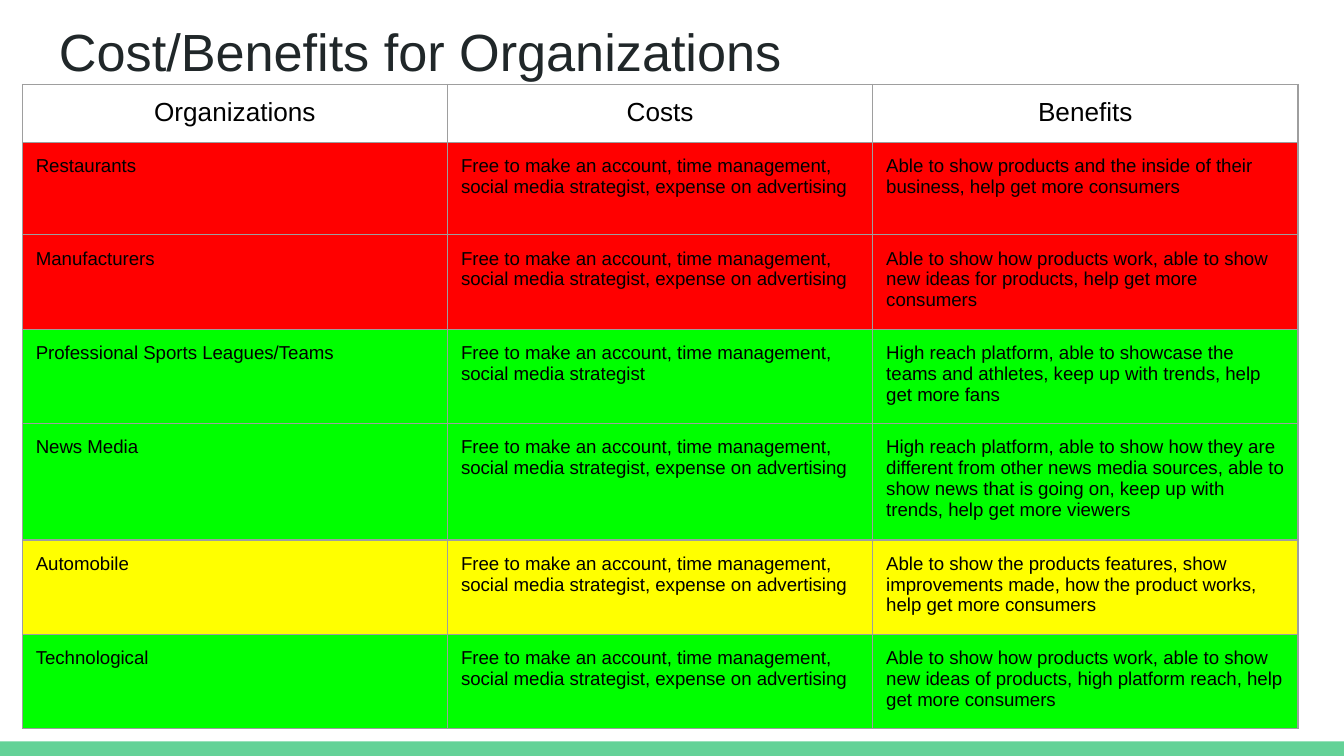
"""Build the slide comparing costs and benefits for organizations."""
import pptx
import pptx.dml.color
import pptx.enum.shapes
import pptx.enum.text
import pptx.oxml
import pptx.oxml.ns
import pptx.util

Pt = pptx.util.Pt
COLORS = {
    "white": "FFFFFF", "black": "000000", "title": "202729", "footer": "63D297",
    "border": "9E9E9E", "red": "FF0000", "green": "00FF00", "yellow": "FFFF00",
}
FONT = "Arial"
TITLE = "Cost/Benefits for Organizations"
HEADERS = ["Organizations", "Costs", "Benefits"]
BASIC_COSTS = "Free to make an account, time management, social media strategist"
FULL_COSTS = BASIC_COSTS + ", expense on advertising"
ORGANIZATIONS = [
    ("red", 49.4, "Restaurants", FULL_COSTS,
     "Able to show products and the inside of their business, help get more consumers"),
    ("red", 36.7, "Manufacturers", FULL_COSTS,
     "Able to show how products work, able to show new ideas for products, "
     "help get more consumers"),
    ("green", 43.2, "Professional Sports Leagues/Teams", BASIC_COSTS,
     "High reach platform, able to showcase the teams and athletes, "
     "keep up with trends, help get more fans"),
    ("green", 61.2, "News Media", FULL_COSTS,
     "High reach platform, able to show how they are different from other news "
     "media sources, able to show news that is going on, keep up with trends, "
     "help get more viewers"),
    ("yellow", 48.2, "Automobile", FULL_COSTS,
     "Able to show the products features, show improvements made, "
     "how the product works, help get more consumers"),
    ("green", 43.2, "Technological", FULL_COSTS,
     "Able to show how products work, able to show new ideas of products, "
     "high platform reach, help get more consumers"),
]
SLIDE_W, SLIDE_H = 720, 405
FOOTER_H = 7.8
TABLE_X, TABLE_Y, COL_W, HEADER_H = 12, 45.2, 227.8, 31
INSET = 7.2


def rgb(name):
    return pptx.dml.color.RGBColor.from_string(COLORS[name])


def style(p, size, color):
    p.font.name = FONT
    p.font.size = Pt(size)
    p.font.color.rgb = rgb(color)


def set_borders(cell):
    tc_pr = cell._tc.get_or_add_tcPr()
    for i, side in enumerate(("lnL", "lnR", "lnT", "lnB")):
        tc_pr.insert(i, pptx.oxml.parse_xml(
            f'<a:{side} {pptx.oxml.ns.nsdecls("a")} w="{Pt(0.75)}"><a:solidFill>'
            f'<a:srgbClr val="{COLORS["border"]}"/></a:solidFill></a:{side}>'))


def fill_cell(cell, text, size, color):
    cell.margin_left = cell.margin_right = Pt(INSET)
    cell.margin_top = cell.margin_bottom = Pt(INSET)
    cell.text = text
    style(cell.text_frame.paragraphs[0], size, "black")
    if color:
        cell.fill.solid()
        cell.fill.fore_color.rgb = rgb(color)
    else:
        cell.fill.background()
    set_borders(cell)


def add_footer(slide):
    sp = slide.shapes.add_shape(
        pptx.enum.shapes.MSO_SHAPE.RECTANGLE,
        0, Pt(SLIDE_H - FOOTER_H), Pt(SLIDE_W), Pt(FOOTER_H))
    sp.shadow.inherit = False
    sp.fill.solid()
    sp.fill.fore_color.rgb = rgb("footer")
    sp.line.fill.background()


def add_title(slide):
    tf = slide.shapes.add_textbox(Pt(24.5), 0, Pt(671), Pt(45.2)).text_frame
    tf.word_wrap = True
    tf.margin_left = tf.margin_right = Pt(INSET)
    tf.margin_top, tf.margin_bottom = Pt(10.5), 0
    tf.text = TITLE
    style(tf.paragraphs[0], 28, "title")


def add_comparison(slide):
    heights = [HEADER_H] + [row[1] for row in ORGANIZATIONS]
    table = slide.shapes.add_table(
        len(heights), len(HEADERS), Pt(TABLE_X), Pt(TABLE_Y),
        Pt(COL_W * len(HEADERS)), Pt(sum(heights))).table
    table.first_row = table.horz_banding = False
    for column in table.columns:
        column.width = Pt(COL_W)
    for row, height in zip(table.rows, heights):
        row.height = Pt(height)
    for c, text in enumerate(HEADERS):
        cell = table.cell(0, c)
        fill_cell(cell, text, 14, None)
        cell.text_frame.paragraphs[0].alignment = pptx.enum.text.PP_ALIGN.CENTER
    for r, (color, _, *texts) in enumerate(ORGANIZATIONS, 1):
        for c, text in enumerate(texts):
            fill_cell(table.cell(r, c), text, 10, color)


def main():
    prs = pptx.Presentation()
    prs.slide_width, prs.slide_height = Pt(SLIDE_W), Pt(SLIDE_H)
    slide = prs.slides.add_slide(prs.slide_layouts[6])
    slide.background.fill.solid()
    slide.background.fill.fore_color.rgb = rgb("white")
    add_footer(slide)
    add_title(slide)
    add_comparison(slide)
    prs.save("out.pptx")


if __name__ == "__main__":
    main()
